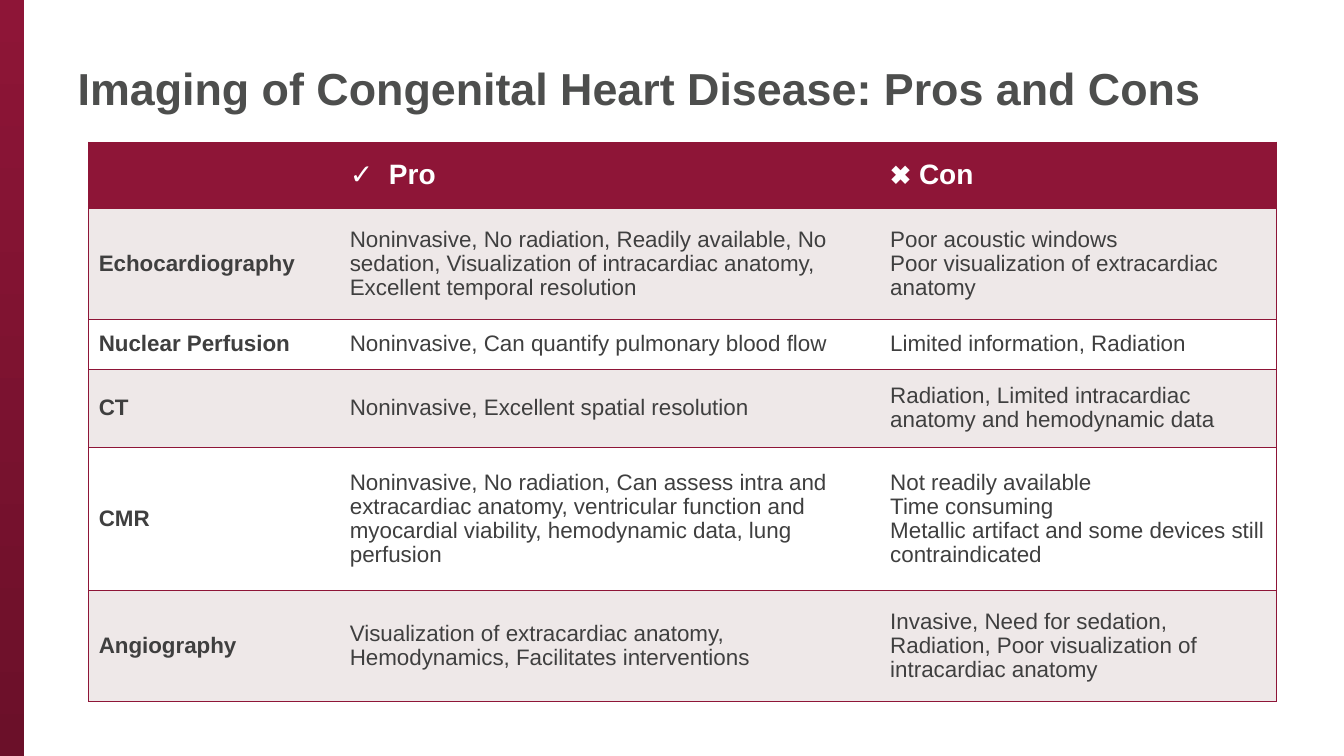
"""Build a slide with a table of pros and cons of imaging methods for congenital heart disease."""
import dataclasses

import lxml.etree
import pptx
import pptx.dml.color
import pptx.enum.shapes
import pptx.enum.text
import pptx.oxml.ns
import pptx.util

CRIMSON = "8E1537"
DARK_CRIMSON = "6B1029"
BLUSH = "EEE8E8"
WHITE = "FFFFFF"
TITLE_GREY = "4D4E4D"
TEXT_GREY = "3F3F3F"
FONT = "Arial"
COLUMN_WIDTHS = (2.49, 5.36, 3.93)


@dataclasses.dataclass(frozen=True)
class Span:
    text: str
    size: float = 16
    color: str = TEXT_GREY
    bold: bool = False


@dataclasses.dataclass(frozen=True)
class Method:
    name: str
    height: float
    pro: str
    cons: tuple[str, ...]


METHODS = (
    Method("Echocardiography", 1.1,
           "Noninvasive, No radiation, Readily available, No sedation, "
           "Visualization of intracardiac anatomy, Excellent temporal resolution",
           ("Poor acoustic windows", "Poor visualization of extracardiac anatomy")),
    Method("Nuclear Perfusion", 0.5,
           "Noninvasive, Can quantify pulmonary blood flow",
           ("Limited information, Radiation",)),
    Method("CT", 0.77,
           "Noninvasive, Excellent spatial resolution",
           ("Radiation, Limited intracardiac anatomy and hemodynamic data",)),
    Method("CMR", 1.42,
           "Noninvasive, No radiation, Can assess intra and extracardiac anatomy, "
           "ventricular function and myocardial viability, hemodynamic data, lung perfusion",
           ("Not readily available", "Time consuming",
            "Metallic artifact and some devices still contraindicated")),
    Method("Angiography", 1.1,
           "Visualization of extracardiac anatomy, Hemodynamics, Facilitates interventions",
           ("Invasive, Need for sedation, Radiation, "
            "Poor visualization of intracardiac anatomy",)),
)


def color_of(value: str) -> pptx.dml.color.RGBColor:
    """Turn a hex string into a colour."""
    return pptx.dml.color.RGBColor.from_string(value)


def write(frame, lines: list[list[Span]], spacing: float) -> None:
    """Write one paragraph per line, run by run."""
    for index, line in enumerate(lines):
        para = frame.add_paragraph() if index else frame.paragraphs[0]
        para.alignment = pptx.enum.text.PP_ALIGN.LEFT
        para.line_spacing = spacing
        for span in line:
            run = para.add_run()
            run.text = span.text
            run.font.name = FONT
            run.font.size = pptx.util.Pt(span.size)
            run.font.bold = span.bold
            run.font.color.rgb = color_of(span.color)


def add_borders(cell, sides: str) -> None:
    """Draw thin crimson borders on the given sides and none on the others."""
    properties = cell._tc.get_or_add_tcPr()
    qualify = pptx.oxml.ns.qn
    for side in "LRTB":
        border = lxml.etree.SubElement(properties, qualify(f"a:ln{side}"), w="12700")
        if side in sides:
            fill = lxml.etree.SubElement(border, qualify("a:solidFill"))
            lxml.etree.SubElement(fill, qualify("a:srgbClr"), val=CRIMSON)
        else:
            lxml.etree.SubElement(border, qualify("a:noFill"))


def add_side_bar(page) -> None:
    """Add the gradient bar along the left edge."""
    bar = page.shapes.add_shape(
        pptx.enum.shapes.MSO_SHAPE.RECTANGLE, 0, 0,
        pptx.util.Inches(0.24), pptx.util.Inches(7.5))
    bar.shadow.inherit = False
    bar.line.fill.background()
    bar.fill.gradient()
    bar.fill.gradient_angle = 270
    for stop, value in zip(bar.fill.gradient_stops, (CRIMSON, DARK_CRIMSON)):
        stop.color.rgb = color_of(value)


def add_title(page) -> None:
    """Place and fill the title placeholder."""
    title = page.shapes.title
    title.left, title.top, title.width, title.height = map(
        pptx.util.Inches, (0.67, 0.22, 11.75, 1.3))
    title.text_frame.vertical_anchor = pptx.enum.text.MSO_ANCHOR.MIDDLE
    heading = Span("Imaging of Congenital Heart Disease: Pros and Cons", 32, TITLE_GREY, True)
    write(title.text_frame, [[heading]], 1.0)


def add_comparison(page) -> None:
    """Add the table of imaging methods."""
    header = [[], [[Span("✓  Pro", 20, WHITE, True)]],
              [[Span("✖", 19, WHITE, True), Span(" Con", 20, WHITE, True)]]]
    rows = [header] + [
        [[[Span(method.name, bold=True)]], [[Span(method.pro)]],
         [[Span(con)] for con in method.cons]]
        for method in METHODS]
    heights = [0.66] + [method.height for method in METHODS]
    table = page.shapes.add_table(
        len(rows), len(COLUMN_WIDTHS), pptx.util.Inches(0.88), pptx.util.Inches(1.41),
        pptx.util.Inches(sum(COLUMN_WIDTHS)), pptx.util.Inches(sum(heights))).table
    for column, width in zip(table.columns, COLUMN_WIDTHS):
        column.width = pptx.util.Inches(width)
    for row_index, (row, height) in enumerate(zip(rows, heights)):
        table.rows[row_index].height = pptx.util.Inches(height)
        shade = CRIMSON if row_index == 0 else (WHITE, BLUSH)[row_index % 2]
        for column_index, (lines, sides) in enumerate(zip(row, ("LTB", "TB", "RTB"))):
            cell = table.cell(row_index, column_index)
            add_borders(cell, sides)
            cell.fill.solid()
            cell.fill.fore_color.rgb = color_of(shade)
            cell.vertical_anchor = pptx.enum.text.MSO_ANCHOR.MIDDLE
            write(cell.text_frame, lines, 0.96)


def main() -> None:
    """Build and save the deck."""
    deck = pptx.Presentation()
    deck.slide_width = pptx.util.Inches(13.33)
    deck.slide_height = pptx.util.Inches(7.5)
    page = deck.slides.add_slide(deck.slide_layouts.get_by_name("Title Only"))
    add_side_bar(page)
    add_title(page)
    add_comparison(page)
    deck.save("out.pptx")


if __name__ == "__main__":
    main()
